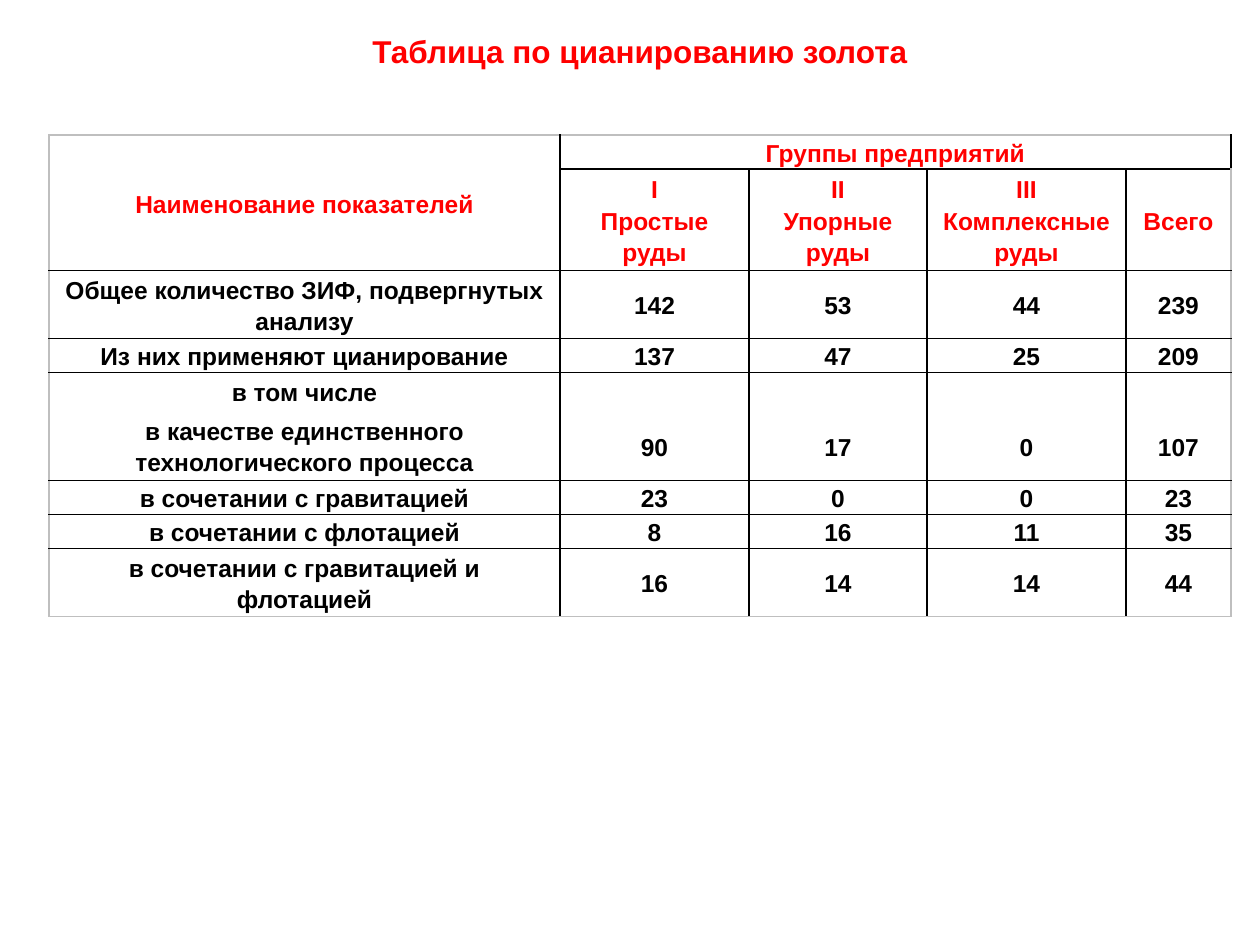
import dataclasses

import lxml.etree
import pptx
import pptx.dml.color
import pptx.enum.text
import pptx.oxml.ns
import pptx.table
import pptx.text.text
import pptx.util

PX = 914400 / 126
RED, BLACK, GREY = "FF0000", "000000", "BFBFBF"
COLUMN_WIDTHS = (511, 189, 178, 199, 105)
ROW_HEIGHTS = (34, 101, 68, 34, 107, 34, 34, 68)
TABLE_LEFT, TABLE_TOP = 49, 135
HEADER_ROWS = 2


@dataclasses.dataclass(frozen=True)
class Indicator:
    """A body row; drop is the extra space above its values."""
    label: str
    values: tuple[int, ...]
    drop: int = 0


INDICATORS = (
    Indicator("Общее количество ЗИФ, подвергнутых анализу", (142, 53, 44, 239)),
    Indicator("Из них применяют цианирование", (137, 47, 25, 209)),
    Indicator("в том числе\nв качестве единственного технологического процесса",
              (90, 17, 0, 107), drop=40),
    Indicator("в сочетании с гравитацией", (23, 0, 0, 23)),
    Indicator("в сочетании с флотацией", (8, 16, 11, 35)),
    Indicator("в сочетании с гравитацией и флотацией", (16, 14, 14, 44)),
)
GROUPS = ("I\vПростые руды", "II\vУпорные руды", "III\vКомплексные руды", "Всего")


def px(length: int) -> pptx.util.Emu:
    return pptx.util.Emu(round(length * PX))


def rgb(color: str) -> pptx.dml.color.RGBColor:
    return pptx.dml.color.RGBColor.from_string(color)


def style_paragraph(paragraph: pptx.text.text._Paragraph, size: int, color: str) -> None:
    paragraph.alignment = pptx.enum.text.PP_ALIGN.CENTER
    paragraph.font.name = "Arial"
    paragraph.font.size = pptx.util.Pt(size)
    paragraph.font.bold = True
    paragraph.font.color.rgb = rgb(color)


def write_cell(cell: pptx.table._Cell, text: str, color: str, drop: int = 0) -> None:
    cell.text = text
    cell.vertical_anchor = pptx.enum.text.MSO_ANCHOR.MIDDLE
    cell.margin_left = cell.margin_right = px(9)
    cell.margin_top, cell.margin_bottom = px(drop), 0
    for paragraph in cell.text_frame.paragraphs:
        style_paragraph(paragraph, 14, color)
        paragraph.line_spacing = 1.15
        paragraph.space_after = pptx.util.Pt(3.8)


def draw_borders(cell: pptx.table._Cell, row: int, column: int) -> None:
    """Draw grey lines on the table's outer edges and black ones inside."""
    outer_edges = {
        "lnL": column == 0,
        "lnR": column == len(COLUMN_WIDTHS) - 1,
        "lnT": row == 0,
        "lnB": row == len(ROW_HEIGHTS) - 1,
    }
    properties = cell._tc.get_or_add_tcPr()
    qn = pptx.oxml.ns.qn
    for index, (edge, is_outer) in enumerate(outer_edges.items()):
        line = lxml.etree.Element(qn(f"a:{edge}"), w=str(pptx.util.Pt(1)))
        fill = lxml.etree.SubElement(line, qn("a:solidFill"))
        lxml.etree.SubElement(fill, qn("a:srgbClr"), val=GREY if is_outer else BLACK)
        properties.insert(index, line)


def add_title(slide: pptx.slide.Slide) -> None:
    shape = slide.shapes.add_textbox(px(TABLE_LEFT), px(26), px(sum(COLUMN_WIDTHS)), px(50))
    shape.text_frame.word_wrap = True
    paragraph = shape.text_frame.paragraphs[0]
    paragraph.text = "Таблица по цианированию золота"
    style_paragraph(paragraph, 18, RED)


def add_indicator_table(slide: pptx.slide.Slide) -> None:
    table = slide.shapes.add_table(
        len(ROW_HEIGHTS), len(COLUMN_WIDTHS), px(TABLE_LEFT), px(TABLE_TOP),
        px(sum(COLUMN_WIDTHS)), px(sum(ROW_HEIGHTS))).table
    table.first_row = table.horz_banding = False
    for column, width in zip(table.columns, COLUMN_WIDTHS):
        column.width = px(width)
    for row, height in zip(table.rows, ROW_HEIGHTS):
        row.height = px(height)

    for row_index, row in enumerate(table.rows):
        for column_index, cell in enumerate(row.cells):
            cell.fill.background()
            draw_borders(cell, row_index, column_index)

    table.cell(0, 0).merge(table.cell(1, 0))
    table.cell(0, 1).merge(table.cell(0, len(GROUPS)))
    write_cell(table.cell(0, 0), "Наименование показателей", RED)
    write_cell(table.cell(0, 1), "Группы предприятий", RED)
    for column_index, group in enumerate(GROUPS, start=1):
        write_cell(table.cell(1, column_index), group, RED)
    for row_index, indicator in enumerate(INDICATORS, start=HEADER_ROWS):
        write_cell(table.cell(row_index, 0), indicator.label, BLACK)
        for column_index, value in enumerate(indicator.values, start=1):
            write_cell(table.cell(row_index, column_index), str(value), BLACK, indicator.drop)


def main() -> None:
    presentation = pptx.Presentation()
    presentation.slide_width, presentation.slide_height = px(1260), px(945)
    slide = presentation.slides.add_slide(presentation.slide_layouts[6])
    add_title(slide)
    add_indicator_table(slide)
    presentation.save("out.pptx")


if __name__ == "__main__":
    main()
